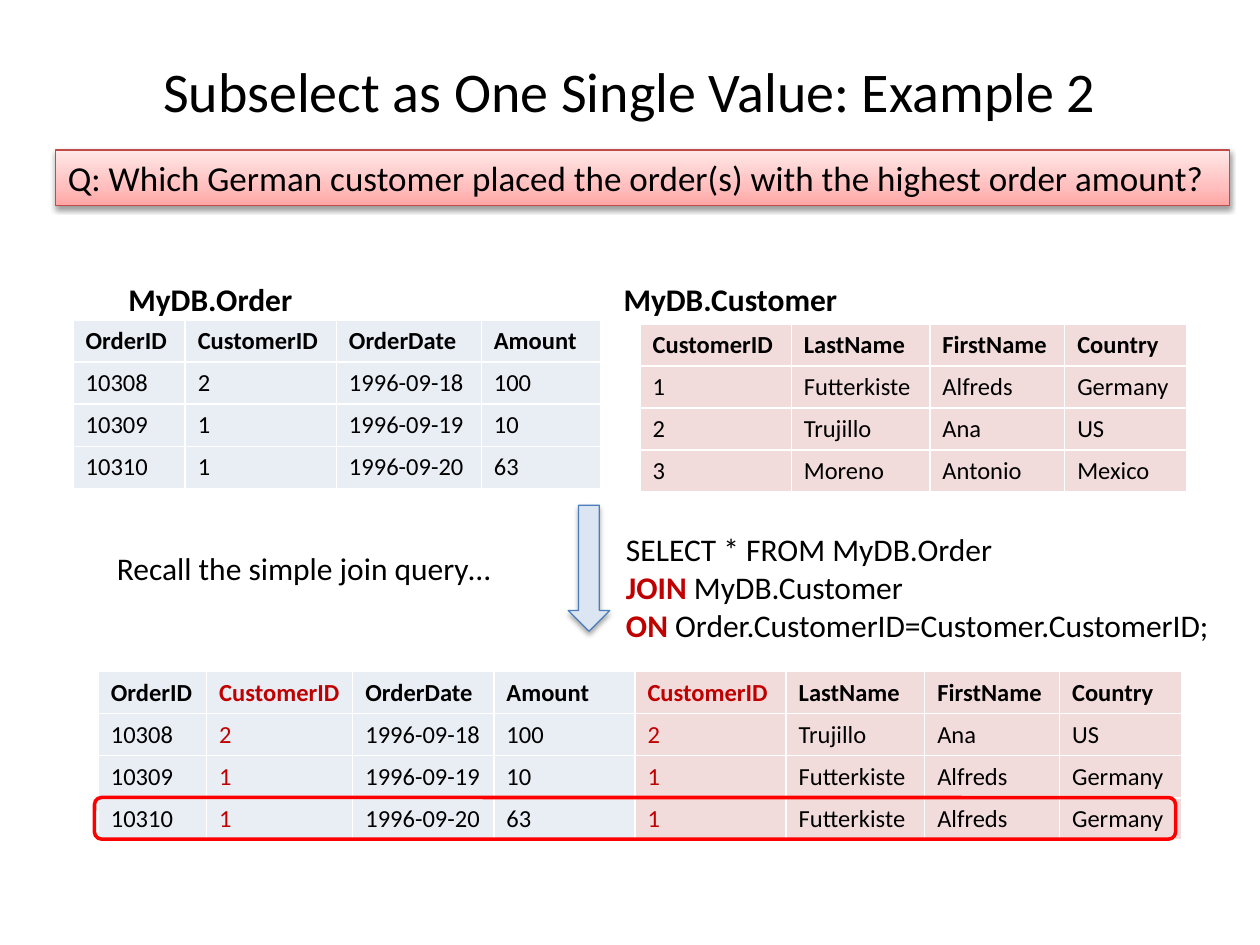
from copy import deepcopy

from lxml.etree import SubElement
from pptx import Presentation
from pptx.dml.color import RGBColor
from pptx.enum.shapes import MSO_SHAPE
from pptx.enum.text import MSO_ANCHOR, MSO_AUTO_SIZE, PP_ALIGN
from pptx.oxml.ns import qn
from pptx.util import Inches, Pt

COLORS = {
    "text": "000000", "key": "C00000", "grid": "FFFFFF", "shadow": "000000",
    "order": "E9EDF4", "customer": "F2DCDB",
    "banner_line": "BF4C48", "arrow": "DCE6F2", "arrow_line": "4B7EBC",
    "highlight": "FF0000",
}
BANNER_STOPS = [(0, "FFA6A5"), (0.35, "FFC0BF"), (1, "FFE7E7")]

ORDERS = [
    ["OrderID", "CustomerID", "OrderDate", "Amount"],
    ["10308", "2", "1996-09-18", "100"],
    ["10309", "1", "1996-09-19", "10"],
    ["10310", "1", "1996-09-20", "63"],
]
CUSTOMERS = [
    ["CustomerID", "LastName", "FirstName", "Country"],
    ["1", "Futterkiste", "Alfreds", "Germany"],
    ["2", "Trujillo", "Ana", "US"],
    ["3", "Moreno", "Antonio", "Mexico"],
]
CUSTOMER_WIDTHS = [1.2, 1.1, 1.07, 0.97]
ROW_HEIGHT = 1.33 / 4


def rgb(name):
    return RGBColor.from_string(COLORS[name])


class SlideBuilder:
    """Holds the text style and the current page."""

    def __init__(self, page, font="Calibri"):
        self.page = page
        self.font = font

    def add_span(self, para, text, size, color="text", bold=False):
        span = para.add_run()
        span.text = text
        span.font.name = self.font
        span.font.size = Pt(size)
        span.font.bold = bold
        span.font.color.rgb = rgb(color)

    def text(self, place, lines, size, wrap=True, align=PP_ALIGN.LEFT,
             anchor=MSO_ANCHOR.TOP, fit=MSO_AUTO_SIZE.SHAPE_TO_FIT_TEXT):
        """Each line is a list of (text, color, bold) spans."""
        box = self.page.shapes.add_textbox(*map(Inches, place))
        self.fill_text(box.text_frame, lines, size, align)
        box.text_frame.word_wrap = wrap
        box.text_frame.auto_size = fit
        box.text_frame.vertical_anchor = anchor

    def fill_text(self, frame, lines, size, align=PP_ALIGN.LEFT):
        for index, line in enumerate(lines):
            para = frame.add_paragraph() if index else frame.paragraphs[0]
            para.alignment = align
            for text, color, bold in line:
                self.add_span(para, text, size, color, bold)

    def shape(self, kind, place, line, width, fill=None):
        shape = self.page.shapes.add_shape(kind, *map(Inches, place))
        shape.shadow.inherit = False
        shape.line.color.rgb = rgb(line)
        shape.line.width = Pt(width)
        if fill:
            shape.fill.solid()
            shape.fill.fore_color.rgb = rgb(fill)
        else:
            shape.fill.background()
        return shape

    def gradient(self, shape, stops, angle):
        shape.fill.gradient()
        shape.fill.gradient_angle = angle
        stop_list = shape._element.spPr.find(".//" + qn("a:gsLst"))
        stop_list.append(deepcopy(stop_list[0]))
        for stop, (position, color) in zip(shape.fill.gradient_stops, stops):
            stop.position = position
            stop.color.rgb = RGBColor.from_string(color)

    def drop_shadow(self, shape, opacity, distance):
        effects = shape._element.spPr.find(qn("a:effectLst"))
        shadow = SubElement(effects, qn("a:outerShdw"), blurRad=str(Pt(3.1)),
                            dist=str(Pt(distance)), dir="5400000", rotWithShape="0")
        color = SubElement(shadow, qn("a:srgbClr"), val=COLORS["shadow"])
        SubElement(color, qn("a:alpha"), val=str(opacity * 1000))

    def table(self, left, top, widths, rows, fills, key_columns=()):
        frame = self.page.shapes.add_table(
            len(rows), len(widths), Inches(left), Inches(top),
            Inches(sum(widths)), Inches(ROW_HEIGHT * len(rows)))
        table = frame.table
        table.first_row = table.horz_banding = False
        for column, width in zip(table.columns, widths):
            column.width = Inches(width)
        for row_index, row in enumerate(rows):
            for column_index, text in enumerate(row):
                cell = table.cell(row_index, column_index)
                cell.fill.solid()
                cell.fill.fore_color.rgb = rgb(fills[column_index])
                cell.vertical_anchor = MSO_ANCHOR.MIDDLE
                color = "key" if column_index in key_columns else "text"
                self.add_span(cell.text_frame.paragraphs[0], text, 14, color,
                              bold=row_index == 0)
                self.cell_borders(cell)

    def cell_borders(self, cell):
        properties = cell._tc.get_or_add_tcPr()
        for index, side in enumerate(("lnL", "lnR", "lnT", "lnB")):
            line = SubElement(properties, qn("a:" + side), w=str(Pt(1)))
            solid = SubElement(line, qn("a:solidFill"))
            SubElement(solid, qn("a:srgbClr"), val=COLORS["grid"])
            properties.insert(index, line)


def join_rows():
    """Match every order with its customer, header included."""
    customers = {row[0]: row for row in CUSTOMERS}
    return [order + customers[order[1]] for order in ORDERS]


def main():
    deck = Presentation()
    deck.slide_width, deck.slide_height = Inches(10), Inches(7.5)
    builder = SlideBuilder(deck.slides.add_slide(deck.slide_layouts[6]))

    # Title
    builder.text((0.5, 0.3, 9, 0.83),
                 [[("Subselect as One Single Value: Example 2", "text", False)]],
                 32, align=PP_ALIGN.CENTER, anchor=MSO_ANCHOR.MIDDLE,
                 fit=MSO_AUTO_SIZE.NONE)

    # Question banner
    banner = builder.shape(MSO_SHAPE.RECTANGLE, (0.44, 1.19, 9.32, 0.44),
                           "banner_line", 0.75)
    builder.gradient(banner, BANNER_STOPS, 90)
    builder.drop_shadow(banner, 38, 1.6)
    question = ("Q: Which German customer placed the order(s) "
                "with the highest order amount?")
    builder.fill_text(banner.text_frame, [[(question, "text", False)]], 20)
    banner.text_frame.vertical_anchor = MSO_ANCHOR.TOP
    banner.text_frame.auto_size = MSO_AUTO_SIZE.SHAPE_TO_FIT_TEXT

    # Source tables and their names
    builder.table(5.08, 2.57, CUSTOMER_WIDTHS, CUSTOMERS, ["customer"] * 4)
    for left, width, name in ((0.92, 1.51, "MyDB.Order"),
                              (4.85, 1.91, "MyDB.Customer")):
        builder.text((left, 2.17, width, 0.4), [[(name, "text", True)]], 18,
                     wrap=False)
    builder.table(0.58, 2.54, [0.89, 1.2, 1.15, 0.95], ORDERS, ["order"] * 4)

    # Arrow down to the joined table
    arrow = builder.shape(MSO_SHAPE.DOWN_ARROW, (4.51, 4.01, 0.33, 1),
                          "arrow_line", 0.75, "arrow")
    builder.drop_shadow(arrow, 35, 1.8)

    # Joined table
    builder.table(0.78, 5.33, [0.86, 1.16, 1.12, 1.12] + CUSTOMER_WIDTHS,
                  join_rows(), ["order"] * 4 + ["customer"] * 4,
                  key_columns=(1, 4))

    # Query and its caption
    builder.text((4.87, 4.16, 5, 1.01), [
        [("SELECT * FROM MyDB.Order", "text", False)],
        [("JOIN ", "key", True), ("MyDB.Customer", "text", False)],
        [("ON ", "key", True),
         ("Order.CustomerID=Customer.CustomerID;", "text", False)],
    ], 18)
    builder.text((0.83, 4.31, 3.2, 0.4),
                 [[("Recall the simple join query…", "text", False)]], 18,
                 wrap=False)

    # Frame around the last joined row
    builder.shape(MSO_SHAPE.ROUNDED_RECTANGLE, (0.75, 6.33, 8.58, 0.33),
                  "highlight", 2)

    deck.save("out.pptx")


if __name__ == "__main__":
    main()
